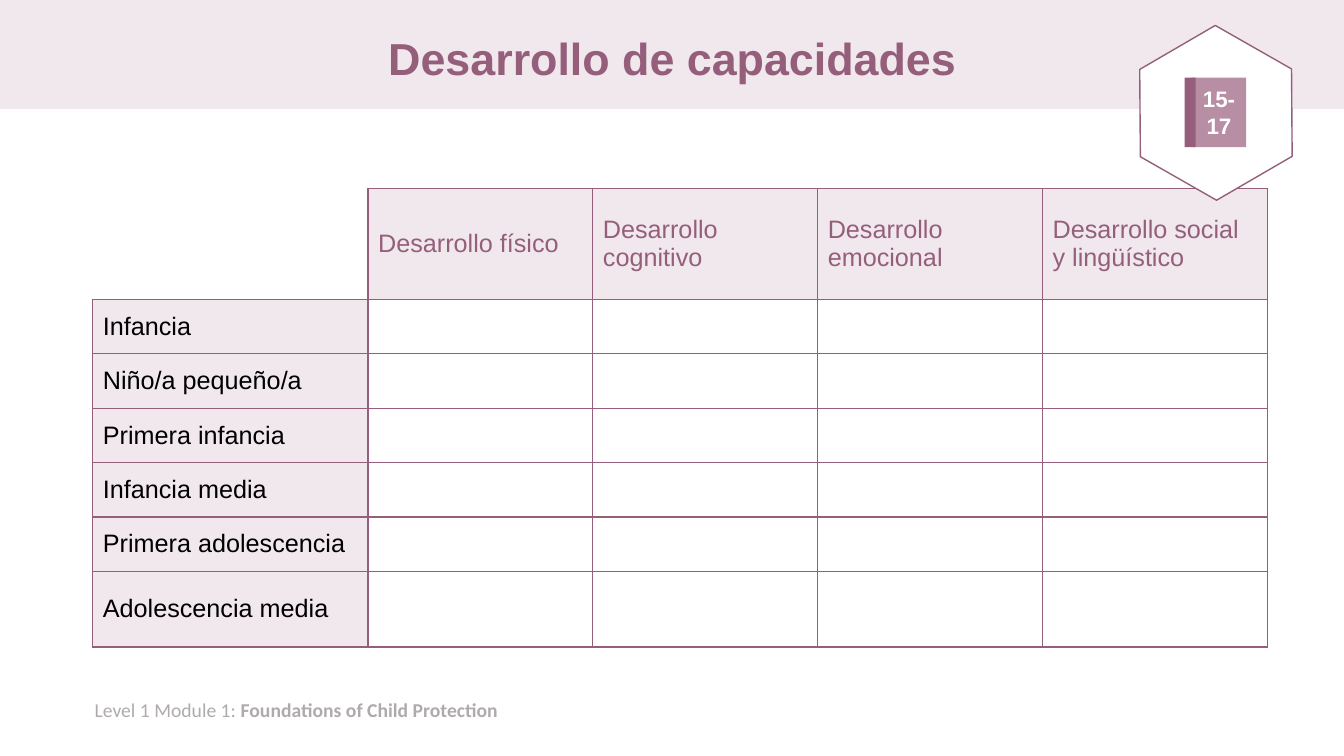
from lxml import etree
from pptx import Presentation
from pptx.dml.color import RGBColor
from pptx.enum.shapes import MSO_SHAPE
from pptx.enum.text import MSO_ANCHOR, PP_ALIGN
from pptx.oxml.ns import qn
from pptx.util import Inches, Pt

TITLE = "Desarrollo de capacidades"
PAGES = "15-17"
FOOTER = [("Level 1 Module 1: ", False), ("Foundations of Child Protection", True)]
AREAS = ["Desarrollo físico", "Desarrollo cognitivo", "Desarrollo emocional",
         "Desarrollo social y lingüístico"]
STAGES = ["Infancia", "Niño/a pequeño/a", "Primera infancia", "Infancia media",
          "Primera adolescencia", "Adolescencia media"]

THEME = {
    "plum": "955F7B", "mauve": "B78EA3", "blush": "F1E8ED",
    "white": "FFFFFF", "black": "000000", "gray": "AFABAB",
    "title": 32, "table": 18, "badge": 16, "footer": 14, "line": 1,
    "font": "Arial", "footer_font": "Calibri",
}
RECT, HEXAGON = MSO_SHAPE.RECTANGLE, MSO_SHAPE.HEXAGON
MIDDLE, TOP = MSO_ANCHOR.MIDDLE, MSO_ANCHOR.TOP
LEFT, CENTER = PP_ALIGN.LEFT, PP_ALIGN.CENTER

SLIDE_W, SLIDE_H = 13.33, 7.5
MARGIN = 0.92
BAND_H = 1.08
TABLE_TOP = 1.87
STAGE_W, AREA_W = 2.73, 2.23
COLUMNS = [STAGE_W] + [AREA_W] * len(AREAS)
ROWS = [1.1] + [0.54] * (len(STAGES) - 1) + [0.75]
BADGE_X, BADGE_Y = 12.06, 1.12
HEX_W, HEX_H = 1.74, 1.5
BOOK_TOP, BOOK_H = 0.77, 0.69


def color(name):
    return RGBColor.from_string(THEME[name])


def box(*lengths):
    return [Inches(length) for length in lengths]


def write(frame, runs, size, ink, font="font", align=LEFT, anchor=MIDDLE, spacing=None):
    frame.word_wrap = True
    frame.vertical_anchor = anchor
    line = frame.paragraphs[0]
    line.alignment = align
    line.line_spacing = spacing
    for words, bold in runs:
        run = line.add_run()
        run.text = words
        run.font.size = Pt(THEME[size])
        run.font.name = THEME[font]
        run.font.bold = bold
        run.font.color.rgb = color(ink)


def add_block(slide, kind, at, fill, outline=None):
    block = slide.shapes.add_shape(kind, *box(*at))
    block.shadow.inherit = False
    block.fill.solid()
    block.fill.fore_color.rgb = color(fill)
    if outline:
        block.line.color.rgb = color(outline)
        block.line.width = Pt(THEME["line"])
    else:
        block.line.fill.background()
    return block


def set_borders(cell, hidden):
    properties = cell._tc.get_or_add_tcPr()
    for place, side in enumerate(("lnL", "lnR", "lnT", "lnB")):
        border = etree.Element(qn(f"a:{side}"), w=str(Pt(THEME["line"])))
        if side in hidden:
            etree.SubElement(border, qn("a:noFill"))
        else:
            paint = etree.SubElement(border, qn("a:solidFill"))
            etree.SubElement(paint, qn("a:srgbClr"), val=THEME["plum"])
        properties.insert(place, border)


def add_heading(slide):
    title = slide.shapes.title
    band = add_block(slide, RECT, (0, 0, SLIDE_W, BAND_H), "blush")
    title.element.addprevious(band.element)
    title.left, title.top, title.width, title.height = box(MARGIN, 0.13, 11.5, 0.95)
    write(title.text_frame, [(TITLE, True)], "title", "plum", align=CENTER, spacing=0.9)


def add_footer(slide):
    footer = slide.shapes.add_textbox(*box(0.84, 6.87, 11.35, 0.34))
    write(footer.text_frame, FOOTER, "footer", "gray", font="footer_font", anchor=TOP)


def add_stages_table(slide):
    table = slide.shapes.add_table(
        len(ROWS), len(COLUMNS),
        *box(MARGIN, TABLE_TOP, sum(COLUMNS), sum(ROWS))).table
    table.first_row = table.horz_banding = False
    for column, width in zip(table.columns, COLUMNS):
        column.width = Inches(width)
    for row, height in zip(table.rows, ROWS):
        row.height = Inches(height)

    grid = [[""] + AREAS] + [[stage] + [""] * len(AREAS) for stage in STAGES]
    for r, labels in enumerate(grid):
        for c, label in enumerate(labels):
            cell = table.cell(r, c)
            cell.fill.solid()
            cell.fill.fore_color.rgb = color("blush" if label else "white")
            set_borders(cell, ("lnL", "lnT") if r == c == 0 else ())
            if label:
                cell.vertical_anchor = MIDDLE
                write(cell.text_frame, [(label, False)], "table",
                      "plum" if r == 0 else "black")


def add_badge(slide):
    frame = add_block(slide, HEXAGON, (BADGE_X - HEX_W / 2, BADGE_Y - HEX_H / 2,
                                       HEX_W, HEX_H), "white", outline="plum")
    frame.adjustments[0] = 0.29
    frame.rotation = 29.7
    cover = add_block(slide, RECT, (11.82, BOOK_TOP, 0.54, BOOK_H), "mauve")
    write(cover.text_frame, [(PAGES, True)], "badge", "white", align=CENTER)
    add_block(slide, RECT, (11.75, BOOK_TOP, 0.11, BOOK_H), "plum")


def main():
    deck = Presentation()
    deck.slide_width, deck.slide_height = box(SLIDE_W, SLIDE_H)
    slide = deck.slides.add_slide(deck.slide_layouts[5])
    add_heading(slide)
    add_footer(slide)
    add_stages_table(slide)
    add_badge(slide)
    deck.save("out.pptx")


if __name__ == "__main__":
    main()
